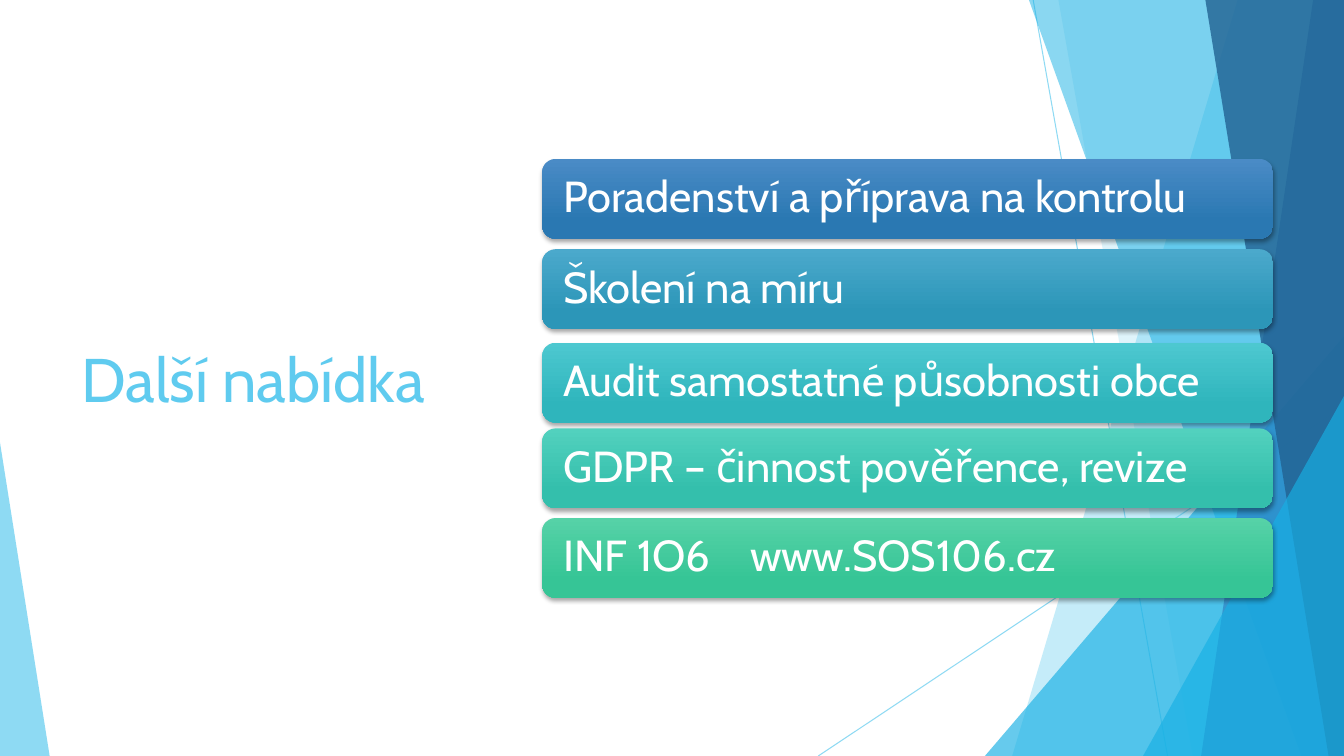
from dataclasses import dataclass

from lxml import etree
from pptx import Presentation
from pptx import util as u
from pptx.dml.color import RGBColor
from pptx.enum import shapes, text
from pptx.oxml import ns

WIDTH, HEIGHT = 960, 540


@dataclass(frozen=True)
class Theme:
    font: str = "Cabin"
    title_size: float = 44
    bar_size: float = 31
    sky: str = "5FCBEF"
    azure: str = "17B0E4"
    blue: str = "2E83C3"
    navy: str = "226292"
    white: str = "FFFFFF"
    shadow: str = "000000"


THEME = Theme()


@dataclass(frozen=True)
class Ray:
    start: tuple[float, float]
    end: tuple[float, float]


@dataclass(frozen=True)
class Facet:
    """Full-height panel reaching the right edge; its left side is slanted."""
    top_x: float
    bottom_x: float
    color: str
    opacity: int


@dataclass(frozen=True)
class Wedge:
    """Right triangle standing on the bottom edge, with its apex at one side."""
    left: float
    top: float
    width: float
    apex: float
    color: str
    opacity: int


@dataclass(frozen=True)
class Bar:
    top: float
    light: str
    dark: str
    label: str


RAYS = [Ray((738, 0), (834, HEIGHT)), Ray((WIDTH, 290), (584.5, HEIGHT))]

BACKDROP = [
    Facet(884, 723, THEME.sky, 36),
    Facet(756, 852, THEME.sky, 20),
    Wedge(703.5, 240, 256.5, 1, THEME.azure, 66),
    Facet(735, 929.5, THEME.azure, 50),
    Facet(938, 858, THEME.blue, 70),
    Facet(861, 949, THEME.navy, 80),
    Wedge(816.5, 283, 143.5, 1, THEME.azure, 66),
    Wedge(0, 316, 35.5, 0, THEME.sky, 70),
]

BARS = [
    Bar(113.5, "4A8BC6", "2A78B2", "Poradenství a příprava na kontrolu"),
    Bar(178, "4BA9CC", "2C96B8", "Školení na míru"),
    Bar(244.8, "4DC8D0", "2FB5BC", "Audit samostatné působnosti obce"),
    Bar(306, "52D1BE", "34BFAC", "GDPR – činnost pověřence, revize"),
    Bar(370, "56D2A7", "36C596", "INF 1O6\twww.SOS106.cz"),
]
BAR_LEFT, BAR_WIDTH, BAR_HEIGHT = 387.3, 522, 57
BAR_INSET = 12.2
ADDRESS_TAB = 133.5


def set_opacity(shape, percent: int) -> None:
    color = shape._element.spPr.find(".//" + ns.qn("a:srgbClr"))
    etree.SubElement(color, ns.qn("a:alpha"), val=str(percent * 1000))


def add_ray(page, ray: Ray) -> None:
    line = page.shapes.add_connector(
        shapes.MSO_CONNECTOR.STRAIGHT,
        *(u.Pt(value) for value in ray.start + ray.end))
    line.line.color.rgb = RGBColor.from_string(THEME.sky)
    line.line.width = u.Pt(0.75)
    set_opacity(line, 70)
    etree.SubElement(line._element.spPr, ns.qn("a:effectLst"))


def add_backdrop_part(page, part: Facet | Wedge) -> None:
    if isinstance(part, Facet):
        outline = page.shapes.build_freeform(u.Pt(part.top_x), 0, scale=1.0)
        corners = [(WIDTH, 0), (WIDTH, HEIGHT), (part.bottom_x, HEIGHT)]
        outline.add_line_segments([(u.Pt(x), u.Pt(y)) for x, y in corners])
        shape = outline.convert_to_shape()
    else:
        shape = page.shapes.add_shape(
            shapes.MSO_SHAPE.ISOSCELES_TRIANGLE, u.Pt(part.left),
            u.Pt(part.top), u.Pt(part.width), u.Pt(HEIGHT - part.top))
        shape.adjustments[0] = part.apex
    shape.shadow.inherit = False
    shape.line.fill.background()
    shape.fill.solid()
    shape.fill.fore_color.rgb = RGBColor.from_string(part.color)
    set_opacity(shape, part.opacity)


def add_span(para, words: str, size: float, color: str) -> None:
    span = para.add_run()
    span.text = words
    span.font.name = THEME.font
    span.font.size = u.Pt(size)
    span.font.color.rgb = RGBColor.from_string(color)


def set_title(page, words: str) -> None:
    box = page.shapes.title
    box.left, box.top = u.Pt(51), u.Pt(108.7)
    box.width, box.height = u.Pt(279.5), u.Pt(322.5)
    frame = box.text_frame
    frame.word_wrap = True
    frame.auto_size = text.MSO_AUTO_SIZE.NONE
    frame.vertical_anchor = text.MSO_ANCHOR.MIDDLE
    para = frame.paragraphs[0]
    para.alignment = text.PP_ALIGN.LEFT
    add_span(para, words, THEME.title_size, THEME.sky)


def add_drop_shadow(shape) -> None:
    shape.shadow.inherit = False
    effects = shape._element.spPr.find(ns.qn("a:effectLst"))
    shadow = etree.SubElement(
        effects, ns.qn("a:outerShdw"), blurRad=str(u.Pt(3)),
        dist=str(u.Pt(2)), dir="5400000", algn="ctr", rotWithShape="0")
    color = etree.SubElement(shadow, ns.qn("a:srgbClr"), val=THEME.shadow)
    etree.SubElement(color, ns.qn("a:alpha"), val="35000")


def add_bar(page, bar: Bar) -> None:
    box = page.shapes.add_shape(
        shapes.MSO_SHAPE.ROUNDED_RECTANGLE, u.Pt(BAR_LEFT), u.Pt(bar.top),
        u.Pt(BAR_WIDTH), u.Pt(BAR_HEIGHT))
    box.line.fill.background()
    box.fill.gradient()
    box.fill.gradient_angle = 270
    stops = zip(box.fill.gradient_stops, (0, 0.78), (bar.light, bar.dark))
    for stop, position, color in stops:
        stop.position = position
        stop.color.rgb = RGBColor.from_string(color)
    add_drop_shadow(box)

    frame = box.text_frame
    frame.word_wrap = True
    frame.vertical_anchor = text.MSO_ANCHOR.MIDDLE
    frame.margin_left = frame.margin_right = u.Pt(BAR_INSET)
    frame.margin_top = frame.margin_bottom = u.Pt(BAR_INSET)
    para = frame.paragraphs[0]
    para.alignment = text.PP_ALIGN.LEFT
    para.line_spacing = 0.9
    if "\t" in bar.label:
        tabs = etree.SubElement(para._p.get_or_add_pPr(), ns.qn("a:tabLst"))
        etree.SubElement(tabs, ns.qn("a:tab"), pos=str(u.Pt(ADDRESS_TAB)),
                         algn="l")
    add_span(para, bar.label, THEME.bar_size, THEME.white)


def main() -> None:
    deck = Presentation()
    deck.slide_width, deck.slide_height = u.Pt(WIDTH), u.Pt(HEIGHT)
    page = deck.slides.add_slide(deck.slide_layouts.get_by_name("Title Only"))
    for ray in RAYS:
        add_ray(page, ray)
    for part in BACKDROP:
        add_backdrop_part(page, part)
    set_title(page, "Další nabídka")
    for bar in BARS:
        add_bar(page, bar)
    deck.save("out.pptx")


if __name__ == "__main__":
    main()
